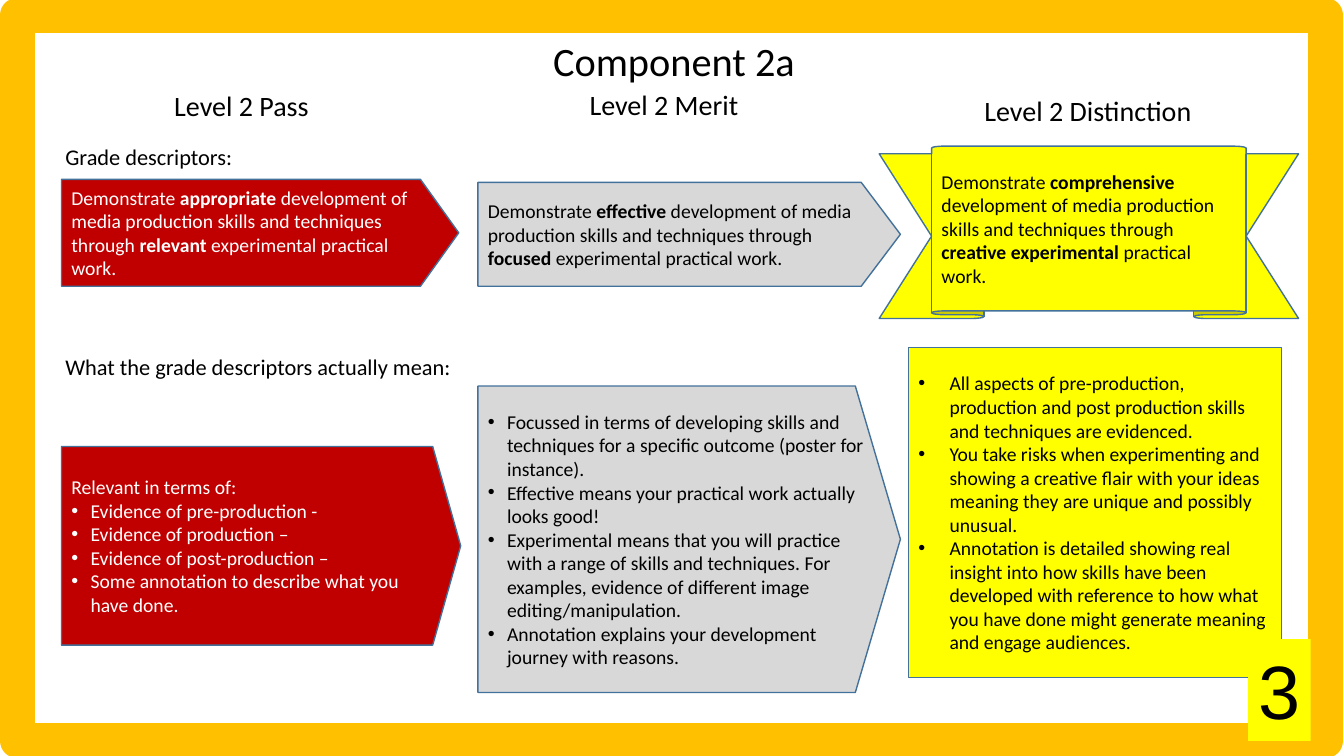
"""Build the Component 2a grade descriptor slide."""
from lxml.etree import SubElement
from pptx import Presentation
from pptx.dml.color import RGBColor
from pptx.enum.shapes import MSO_SHAPE
from pptx.enum.text import MSO_ANCHOR, PP_ALIGN
from pptx.oxml.ns import qn
from pptx.util import Inches, Pt


def rgb(value):
    return RGBColor.from_string(value)


def add_text(sp, paragraphs, size, color="000000", align=PP_ALIGN.LEFT,
             anchor=MSO_ANCHOR.MIDDLE, indent=0.19, font="Calibri", wrap=True):
    tf = sp.text_frame
    tf.word_wrap = wrap
    tf.vertical_anchor = anchor
    for i, text in enumerate(paragraphs):
        p = tf.add_paragraph() if i else tf.paragraphs[0]
        p.alignment = align
        if text.startswith("•"):
            pPr = p._p.get_or_add_pPr()
            pPr.set("marL", str(Inches(indent)))
            pPr.set("indent", str(-Inches(indent)))
            SubElement(pPr, qn("a:buFont"), typeface="Arial")
            SubElement(pPr, qn("a:buChar"), char="•")
            text = text[1:]
        for j, part in enumerate(text.split("**")):
            r = p.add_run()
            r.text = part
            r.font.color.rgb = rgb(color)
            formats = {"name": font, "size": Pt(size), "bold": j % 2 == 1}
            for name, value in formats.items():
                setattr(r.font, name, value)


prs = Presentation()
prs.slide_width, prs.slide_height = Inches(13.33), Inches(7.5)
s = prs.slides.add_slide(prs.slide_layouts[6])

frame = s.shapes.add_shape(MSO_SHAPE.RECTANGLE, Inches(0.17), Inches(0.15),
                           Inches(12.98), Inches(7.2))
frame.shadow.inherit = False
frame.fill.background()
frame.line.color.rgb = rgb("FFC000")
frame.line.width = Pt(25)

CENTER, LEFT = PP_ALIGN.CENTER, PP_ALIGN.LEFT
TOP, MIDDLE = MSO_ANCHOR.TOP, MSO_ANCHOR.MIDDLE
labels = [
    ("Component 2a", (0.38, 0.34, 12.61, 0.57), 28.8, CENTER, MIDDLE),
    ("Grade descriptors:", (0.55, 1.37, 3.71, 0.37), 16, LEFT, TOP),
    ("What the grade descriptors actually mean:", (0.55, 3.45, 4.35, 0.37), 16, LEFT, TOP),
    ("Level 2 Pass", (1.62, 0.83, 1.55, 0.44), 20, CENTER, TOP),
    ("Level 2 Merit", (5.74, 0.82, 1.69, 0.44), 20, CENTER, TOP),
    ("Level 2 Distinction", (9.65, 0.88, 2.28, 0.44), 20, CENTER, TOP),
]
for text, box, size, align, anchor in labels:
    sp = s.shapes.add_textbox(*map(Inches, box))
    add_text(sp, [text], size, align=align, anchor=anchor)
    if size == 28.8:
        sp.text_frame.paragraphs[0].line_spacing = 0.9

RED, GREY, YELLOW = "C00000", "D8D8D8", "FFFF00"
ARROW = MSO_SHAPE.PENTAGON
panels = [
    (ARROW, (0.61, 1.78, 3.94, 1.06), [0.358], RED, [
        "Demonstrate **appropriate** development of media production skills and "
        "techniques through **relevant **experimental practical work."]),
    (ARROW, (4.74, 1.81, 4.19, 1.03), [0.377], GREY, [
        "Demonstrate **effective** development of media production skills and "
        "techniques through **focused** experimental practical work."]),
    (MSO_SHAPE.UP_RIBBON, (8.72, 1.45, 4.16, 1.71), [0.044, 0.75], YELLOW, [
        "Demonstrate **comprehensive** development of media production skills and "
        "techniques through **creative experimental **practical work."]),
    (ARROW, (0.61, 4.43, 3.96, 1.97), [0.141], RED, [
        "Relevant in terms of:",
        "•Evidence of pre-production -",
        "•Evidence of production –",
        "•Evidence of post-production –",
        "•Some annotation to describe what you have done."]),
    (ARROW, (4.74, 3.83, 4.19, 3.04), [0.147], GREY, [
        "•Focussed in terms of developing skills and techniques for a specific "
        "outcome (poster for instance).",
        "•Effective means your practical work actually looks good!",
        "•Experimental means that you will practice with a range of skills and "
        "techniques. For examples, evidence of different image editing/manipulation.",
        "•Annotation explains your development journey with reasons."]),
    (MSO_SHAPE.RECTANGLE, (9.01, 3.45, 3.7, 3.27), [], YELLOW, [
        "•All aspects of pre-production, production and post production skills "
        "and techniques are evidenced.",
        "•You take risks when experimenting and showing a creative flair with "
        "your ideas meaning they are unique and possibly unusual.",
        "•Annotation is detailed showing real insight into how skills have been "
        "developed with reference to how what you have done might generate "
        "meaning and engage audiences."]),
]
for kind, box, adjustments, fill, paragraphs in panels:
    sp = s.shapes.add_shape(kind, *map(Inches, box))
    sp.shadow.inherit = False
    for i, value in enumerate(adjustments):
        sp.adjustments[i] = value
    sp.fill.solid()
    sp.fill.fore_color.rgb = rgb(fill)
    sp.line.color.rgb = rgb("42719B")
    sp.line.width = Pt(1)
    add_text(sp, paragraphs, 14, "FFFFFF" if fill == RED else "000000",
             indent=0.31 if kind == MSO_SHAPE.RECTANGLE else 0.19)

number = s.shapes.add_textbox(Inches(12.38), Inches(6.34), Inches(0.62), Inches(1.01))
number.fill.solid()
number.fill.fore_color.rgb = rgb(YELLOW)
add_text(number, ["3"], 54, align=CENTER, anchor=TOP, font="Arial", wrap=False)

prs.save("out.pptx")
